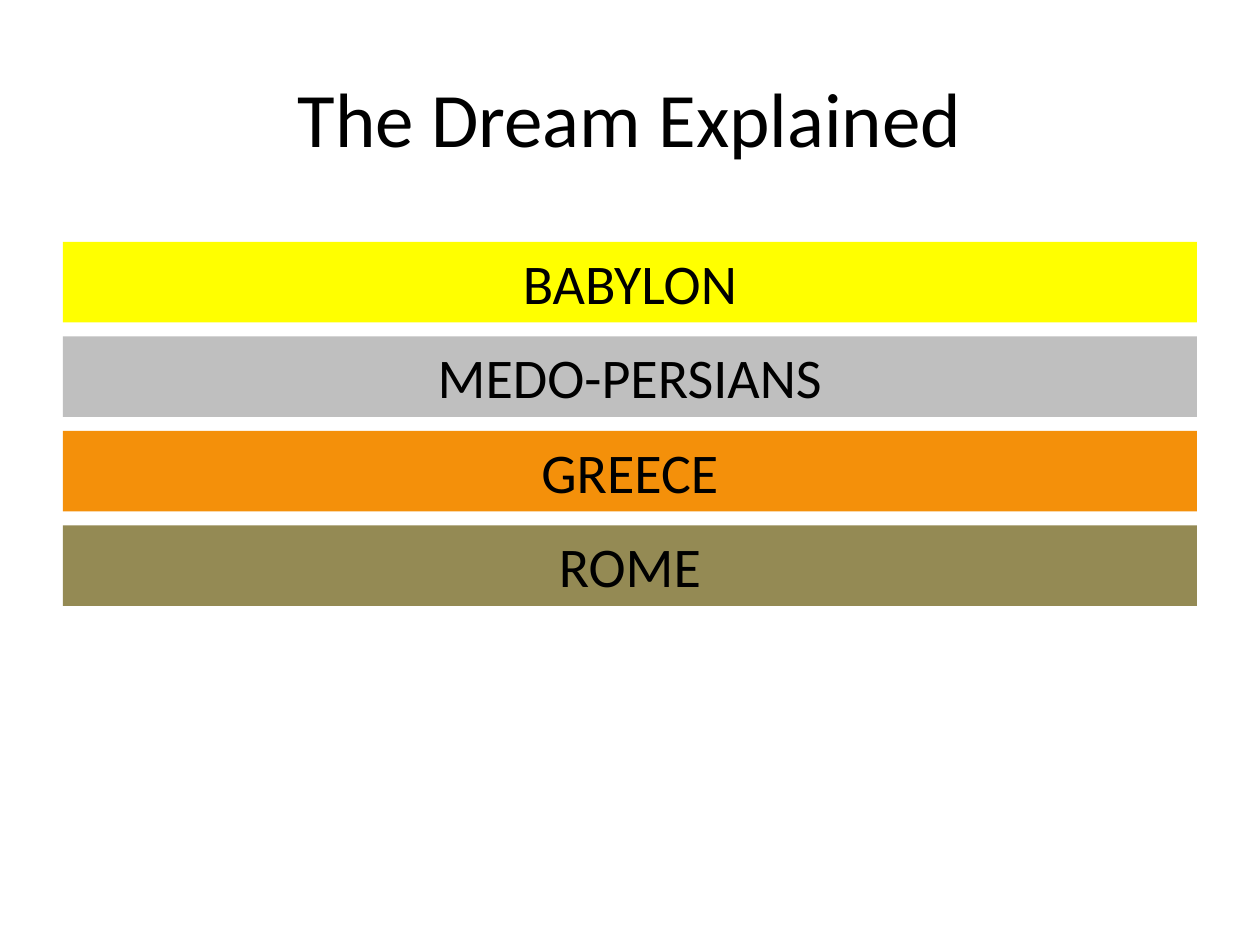
from pptx import Presentation
from pptx.dml.color import RGBColor
from pptx.enum.shapes import MSO_SHAPE
from pptx.enum.text import MSO_ANCHOR, PP_ALIGN
from pptx.util import Inches, Pt

FONT = "Calibri"
SLIDE_WIDTH, SLIDE_HEIGHT = 10, 7.5
MARGIN = SLIDE_WIDTH * 0.05
CONTENT_WIDTH = SLIDE_WIDTH - 2 * MARGIN

# Rows of the kingdom bars
FIRST_ROW_TOP = 1.92
ROW_PITCH = 0.75
BAR_HEIGHT = 0.64

KINGDOMS = [
    ("BABYLON", "FFFF00"),
    ("MEDO-PERSIANS", "BFBFBF"),
    ("GREECE", "F4900A"),
    ("ROME", "948A54"),
]


def color(hex_value):
    return RGBColor.from_string(hex_value)


def content_area(top, height):
    """Position and size of a band between the side margins."""
    return [Inches(length) for length in (MARGIN, top, CONTENT_WIDTH, height)]


def write_centered(shape, text, size, anchor):
    frame = shape.text_frame
    frame.word_wrap = True
    frame.vertical_anchor = anchor
    para = frame.paragraphs[0]
    para.text = text
    para.alignment = PP_ALIGN.CENTER
    para.font.name = FONT
    para.font.size = Pt(size)
    para.font.color.rgb = color("000000")


def add_title(page, text):
    box = page.shapes.add_textbox(*content_area(SLIDE_HEIGHT * 0.04, 1.25))
    write_centered(box, text, 44, MSO_ANCHOR.MIDDLE)


def add_kingdom_bar(page, row, name, fill):
    top = FIRST_ROW_TOP + row * ROW_PITCH
    bar = page.shapes.add_shape(MSO_SHAPE.RECTANGLE, *content_area(top, BAR_HEIGHT))
    bar.shadow.inherit = False
    bar.fill.solid()
    bar.fill.fore_color.rgb = color(fill)
    bar.line.fill.background()
    write_centered(bar, name, 32, MSO_ANCHOR.TOP)


def main():
    deck = Presentation()
    deck.slide_width = Inches(SLIDE_WIDTH)
    deck.slide_height = Inches(SLIDE_HEIGHT)
    page = deck.slides.add_slide(deck.slide_layouts[6])

    # Heading
    add_title(page, "The Dream Explained")

    # Kingdoms, from first to last
    for row, (name, fill) in enumerate(KINGDOMS):
        add_kingdom_bar(page, row, name, fill)

    deck.save("out.pptx")


if __name__ == "__main__":
    main()
